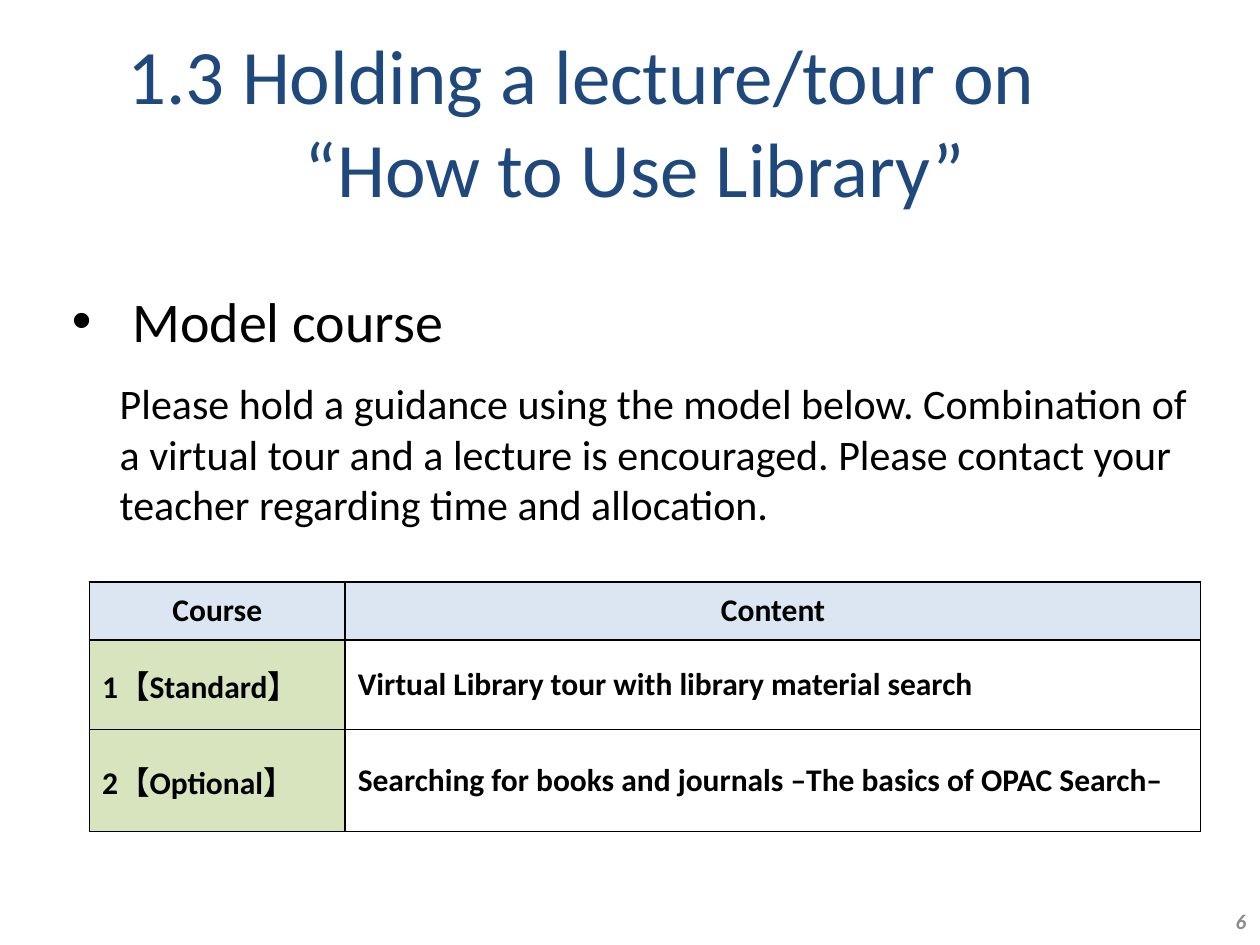
from lxml.etree import SubElement
from pptx import Presentation
from pptx.dml.color import RGBColor
from pptx.enum.text import MSO_ANCHOR as Anchor, MSO_AUTO_SIZE as AutoSize, PP_ALIGN as Align
from pptx.oxml.ns import qn
from pptx.util import Inches, Pt

FONT = "Calibri"
BLACK, NAVY, GRAY = "000000", "1F497D", "8C8C8C"
HEADER_FILL, COURSE_FILL = "DCE6F2", "D7E4BD"

TITLE = ["1.3 Holding a lecture/tour on", "“How to Use Library”"]
HEADING = "Model course"
GUIDANCE = (
    "Please hold a guidance using the model below. Combination of a virtual tour "
    "and a lecture is encouraged. Please contact your teacher regarding time and allocation."
)
COURSES = [
    ("Course", "Content"),
    ("1【Standard】", "Virtual Library tour with library material search"),
    ("2【Optional】", "Searching for books and journals –The basics of OPAC Search–"),
]
COLUMN_WIDTHS = [2.03, 6.79]
ROW_HEIGHTS = [0.46, 0.71, 0.81]
PAGE_NUMBER = "6"


def color(value):
    return RGBColor.from_string(value)


def place(shape, left, top, width, height):
    shape.left, shape.top = Inches(left), Inches(top)
    shape.width, shape.height = Inches(width), Inches(height)


def write(frame, text, size, fill=BLACK, align=Align.LEFT, bold=False, italic=False,
          margin=0, indent=0, before=0, bullet=None):
    paragraph = frame.paragraphs[0]
    if paragraph.runs:
        paragraph = frame.add_paragraph()
    properties = paragraph._p.get_or_add_pPr()
    properties.set("marL", str(Inches(margin)))
    properties.set("indent", str(Inches(indent)))
    paragraph.space_before = Pt(before)
    if bullet:
        SubElement(properties, qn("a:buFont"), typeface="Arial")
        SubElement(properties, qn("a:buChar"), char=bullet)
    else:
        SubElement(properties, qn("a:buNone"))
    paragraph.alignment = align
    run = paragraph.add_run()
    run.text = text
    font = run.font
    font.name, font.size = FONT, Pt(size)
    font.bold, font.italic = bold, italic
    font.color.rgb = color(fill)


def add_borders(cell):
    properties = cell._tc.get_or_add_tcPr()
    for side in ("lnL", "lnR", "lnT", "lnB"):
        line = SubElement(properties, qn(f"a:{side}"), w=str(Pt(1)))
        fill = SubElement(line, qn("a:solidFill"))
        SubElement(fill, qn("a:srgbClr"), val=BLACK)


def add_courses(slide):
    shape = slide.shapes.add_table(
        len(COURSES), len(COLUMN_WIDTHS), Inches(0.71), Inches(4.62),
        Inches(sum(COLUMN_WIDTHS)), Inches(sum(ROW_HEIGHTS)))
    table = shape.table
    table.first_row = table.horz_banding = False
    for column, width in zip(table.columns, COLUMN_WIDTHS):
        column.width = Inches(width)
    for row, height in zip(table.rows, ROW_HEIGHTS):
        row.height = Inches(height)
    for row_index, texts in enumerate(COURSES):
        for column_index, text in enumerate(texts):
            cell = table.cell(row_index, column_index)
            cell.vertical_anchor = Anchor.MIDDLE
            add_borders(cell)
            if row_index and column_index:
                cell.fill.background()
            else:
                cell.fill.solid()
                cell.fill.fore_color.rgb = color(COURSE_FILL if row_index else HEADER_FILL)
            write(cell.text_frame, text, 18, bold=True,
                  align=Align.LEFT if row_index else Align.CENTER)


def main():
    presentation = Presentation()
    presentation.slide_width, presentation.slide_height = Inches(10), Inches(7.5)
    slide = presentation.slides.add_slide(presentation.slide_layouts[1])

    title, body = slide.placeholders
    place(title, 0.91, 0.2, 9.92, 1.51)
    place(body, 0.47, 2.22, 9.07, 4.93)
    for shape in (title, body):
        shape.text_frame.auto_size = AutoSize.NONE
    title.text_frame.vertical_anchor = Anchor.MIDDLE
    for line, margin in zip(TITLE, (0, 1.41)):
        write(title.text_frame, line, 44, NAVY, margin=margin)

    write(body.text_frame, HEADING, 32, margin=0.48, indent=-0.48, bullet="•")
    write(body.text_frame, GUIDANCE, 24, margin=0.38, before=14)

    add_courses(slide)

    number = slide.shapes.add_textbox(Inches(7.66), Inches(7.11), Inches(2.33), Inches(0.4))
    number.text_frame.word_wrap = True
    number.text_frame.vertical_anchor = Anchor.MIDDLE
    write(number.text_frame, PAGE_NUMBER, 12, GRAY, Align.RIGHT, bold=True, italic=True)

    presentation.save("out.pptx")


if __name__ == "__main__":
    main()
